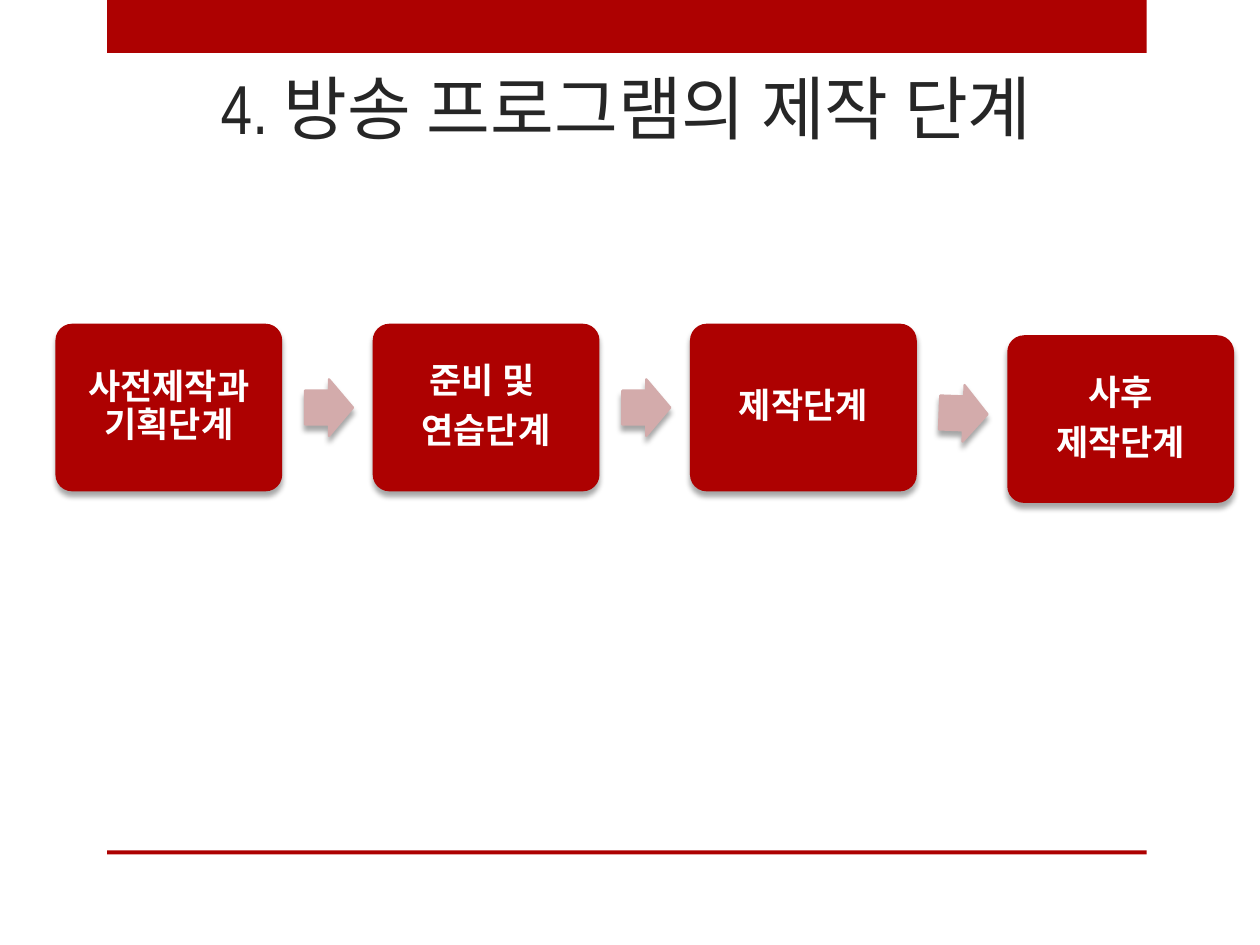
import pptx
import pptx.util
import pptx.dml.color
import pptx.enum.shapes
import pptx.enum.text
import pptx.oxml
import pptx.oxml.ns

Pt = pptx.util.Pt
Shape = pptx.enum.shapes.MSO_SHAPE
Align = pptx.enum.text.PP_ALIGN
Anchor = pptx.enum.text.MSO_ANCHOR

TITLE = "4. 방송 프로그램의 제작 단계"
STEPS = [
    ["사전제작과 기획단계"],
    ["준비 및 ", "연습단계"],
    ["제작단계"],
    ["사후", "제작단계"],
]
THEME = {
    "red": "AD0101", "pink": "D3ABAB", "ink": "262626", "white": "FFFFFF",
    "head": "Arial Narrow", "body": "Noto Sans CJK KR",
    "title": 39.6, "step": 20,
}
BARS = [(0, 30.2), (486, 2.2)]
BAR_X, BAR_W = 61.2, 594
BOX_X, BOX_Y, BOX_W, BOX_H = 31.7, 185, 129.6, 95.8
PITCH, INSET = 181.3, 8.5
ARROW_X, ARROW_W, ARROW_H = 142.6, 27.4, 32.4
DROP, TILT = 6.6, 2.1


def tint(name):
    return pptx.dml.color.RGBColor.from_string(THEME[name])


def add_shape(slide, kind, box, color):
    shape = slide.shapes.add_shape(kind, *map(Pt, box))
    shape.shadow.inherit = False
    shape.fill.solid()
    shape.fill.fore_color.rgb = tint(color)
    shape.line.fill.background()
    return shape


def add_shadow(shape):
    effects = shape._element.spPr.find(pptx.oxml.ns.qn("a:effectLst"))
    effects.append(pptx.oxml.parse_xml(
        f'<a:outerShdw {pptx.oxml.ns.nsdecls("a")} blurRad="{Pt(3)}" dist="{Pt(3)}" '
        'dir="5400000" rotWithShape="0"><a:srgbClr val="000000">'
        '<a:alpha val="35000"/></a:srgbClr></a:outerShdw>'))


def style(para, face, size, color, bold=False):
    para.alignment = Align.CENTER
    font = para.font
    font.name, font.size, font.bold = THEME[face], Pt(THEME[size]), bold
    font.color.rgb = tint(color)
    latin = font._element.find(pptx.oxml.ns.qn("a:latin"))
    latin.addnext(pptx.oxml.parse_xml(
        f'<a:ea {pptx.oxml.ns.nsdecls("a")} typeface="{THEME["body"]}"/>'))


def add_title(slide):
    title = slide.shapes.title
    title.left, title.top, title.width, title.height = map(Pt, (60.5, 30.2, 594.7, 58.3))
    frame = title.text_frame
    frame.text = TITLE
    frame.vertical_anchor = Anchor.BOTTOM
    frame.auto_size = pptx.enum.text.MSO_AUTO_SIZE.NONE
    style(frame.paragraphs[0], "head", "title", "ink")


def add_step(slide, left, top, lines):
    box = add_shape(slide, Shape.ROUNDED_RECTANGLE, (left, top, BOX_W, BOX_H), "red")
    box.adjustments[0] = 0.1
    add_shadow(box)
    frame = box.text_frame
    frame.word_wrap = True
    frame.vertical_anchor = Anchor.MIDDLE
    frame.margin_left = frame.margin_right = Pt(INSET)
    frame.margin_top = frame.margin_bottom = Pt(INSET)
    frame.text = "\n".join(lines)
    for para in frame.paragraphs:
        style(para, "body", "step", "white", True)
        para.line_spacing = 0.9
        para.space_after = Pt(0.35 * THEME["step"])


def add_arrow(slide, left, mid, turn):
    arrow = add_shape(slide, Shape.RIGHT_ARROW,
                      (left, mid - ARROW_H / 2, ARROW_W, ARROW_H), "pink")
    arrow.adjustments[0], arrow.adjustments[1] = 0.6, 0.5
    arrow.line.color.rgb = tint("pink")
    arrow.line.width = Pt(1.25)
    arrow.rotation = turn
    add_shadow(arrow)


def main():
    deck = pptx.Presentation()
    deck.slide_width, deck.slide_height = Pt(720), Pt(540)
    slide = deck.slides.add_slide(deck.slide_layouts[5])
    for top, height in BARS:
        add_shape(slide, Shape.RECTANGLE, (BAR_X, top, BAR_W, height), "red")
    add_title(slide)
    last = len(STEPS) - 1
    tops = [BOX_Y + DROP * (i == last) for i in range(len(STEPS))]
    for i, lines in enumerate(STEPS):
        left = BOX_X + i * PITCH
        add_step(slide, left, tops[i], lines)
        if i < last:
            mid = (tops[i] + tops[i + 1] + BOX_H) / 2
            add_arrow(slide, left + ARROW_X, mid, TILT * (tops[i] != tops[i + 1]))
    deck.save("out.pptx")


if __name__ == "__main__":
    main()
